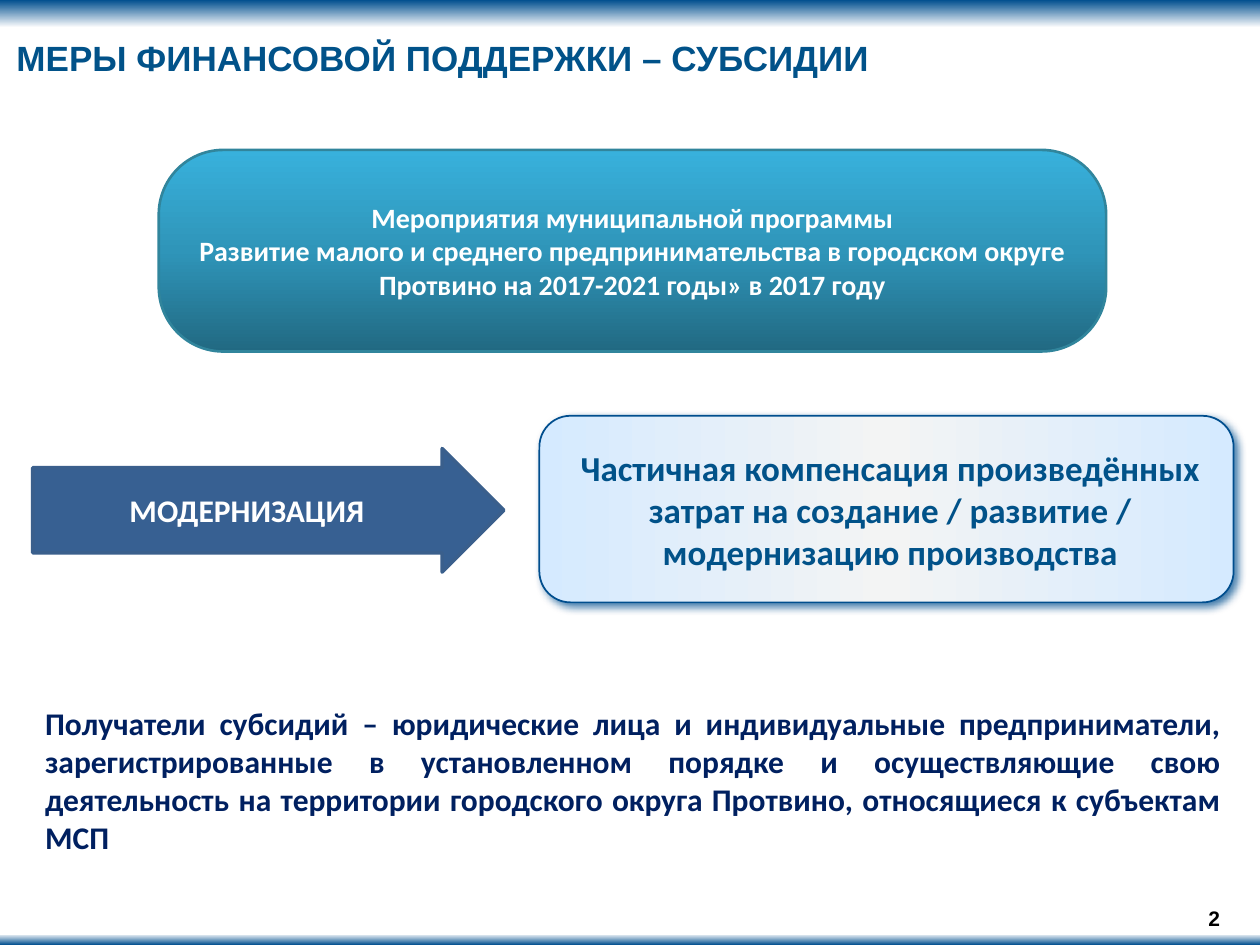
from dataclasses import dataclass
from typing import Optional

from pptx import Presentation
from pptx.dml.color import RGBColor
from pptx.enum.shapes import MSO_SHAPE
from pptx.enum.text import MSO_ANCHOR, MSO_AUTO_SIZE, PP_ALIGN
from pptx.oxml import parse_xml
from pptx.oxml.ns import nsdecls, qn
from pptx.util import Pt

COLORS = {
    "navy": "004E8E", "white": "FFFFFF", "title": "015289", "black": "000000",
    "pale": "D5EAFF", "grey": "F3F4F4", "arrow": "376092", "arrow_line": "3A5F8C",
    "deep": "216982", "teal": "2F95B9", "sky": "38B1DC", "teal_line": "31859C",
    "body": "002060",
}


@dataclass
class Box:
    """A preset shape with its place in points, its fill and its outline."""
    left: float
    top: float
    width: float
    height: float
    kind: MSO_SHAPE = MSO_SHAPE.RECTANGLE
    fill: tuple[str, ...] = ()
    angle: int = 0
    line: Optional[str] = None
    line_width: float = 1
    adjust: tuple[float, ...] = ()
    shadow: Optional[str] = None


BANDS = [
    Box(0, 533.5, 720, 6.5, fill=("navy", "white"), angle=270),
    Box(0, 0, 720, 15.8, fill=("navy", "white"), angle=90),
]
MEASURE = Box(308.2, 237.6, 396.7, 106.6, MSO_SHAPE.ROUNDED_RECTANGLE,
              ("pale", "grey", "pale"), line="navy", shadow="navy")
ARROW = Box(18.7, 256.3, 269.3, 70.6, MSO_SHAPE.RIGHT_ARROW, ("arrow",),
            line="arrow_line", line_width=2, adjust=(0.69, 0.5))
PROGRAM = Box(90.7, 85.7, 541.4, 115.2, MSO_SHAPE.ROUNDED_RECTANGLE,
              ("deep", "teal", "sky"), 270, "teal_line", 1.5, (0.32,))


def rgb(name: str) -> RGBColor:
    """Return a named colour."""
    return RGBColor.from_string(COLORS[name])


def set_gradient(sp, names: tuple[str, ...], angle: int) -> None:
    """Fill a shape with evenly spaced gradient stops."""
    stops = "".join(
        f'<a:gs pos="{i * 100000 // (len(names) - 1)}"><a:srgbClr val="{COLORS[name]}"/></a:gs>'
        for i, name in enumerate(names))
    sp.fill.gradient()
    spPr = sp._element.spPr
    spPr.replace(spPr.find(qn("a:gradFill")), parse_xml(
        f'<a:gradFill {nsdecls("a")} rotWithShape="1"><a:gsLst>{stops}</a:gsLst>'
        f'<a:lin ang="{angle * 60000}" scaled="0"/></a:gradFill>'))


def set_shadow(sp, name: str) -> None:
    """Give a shape a soft shadow towards the lower right."""
    sp._element.spPr.find(qn("a:effectLst")).append(parse_xml(
        f'<a:outerShdw {nsdecls("a")} blurRad="{Pt(5)}" dist="{Pt(3)}" dir="2700000" '
        f'algn="tl" rotWithShape="0"><a:srgbClr val="{COLORS[name]}">'
        '<a:alpha val="75000"/></a:srgbClr></a:outerShdw>'))


def add_box(s, box: Box):
    """Draw a box on the slide and return its shape."""
    sp = s.shapes.add_shape(box.kind, Pt(box.left), Pt(box.top), Pt(box.width), Pt(box.height))
    sp.shadow.inherit = False
    for i, value in enumerate(box.adjust):
        sp.adjustments[i] = value
    if len(box.fill) > 1:
        set_gradient(sp, box.fill, box.angle)
    else:
        sp.fill.solid()
        sp.fill.fore_color.rgb = rgb(box.fill[0])
    if box.line:
        sp.line.color.rgb = rgb(box.line)
        sp.line.width = Pt(box.line_width)
    else:
        sp.line.fill.background()
    if box.shadow:
        set_shadow(sp, box.shadow)
    return sp


def add_textbox(s, left: float, top: float, width: float, height: float):
    """Add a text box placed in points."""
    return s.shapes.add_textbox(Pt(left), Pt(top), Pt(width), Pt(height))


def set_text(sp, text: str, *, size: float, color: str, font: str = "Calibri",
             align: PP_ALIGN = PP_ALIGN.CENTER, anchor: MSO_ANCHOR = MSO_ANCHOR.MIDDLE,
             margin: Optional[float] = None, indent: float = 0,
             wrap: bool = True, grow: bool = False) -> None:
    """Write bold text into a shape and format it."""
    tf = sp.text_frame
    tf.text = text
    tf.word_wrap = wrap
    tf.vertical_anchor = anchor
    tf.auto_size = MSO_AUTO_SIZE.SHAPE_TO_FIT_TEXT if grow else MSO_AUTO_SIZE.NONE
    if margin is not None:
        tf.margin_left = tf.margin_top = tf.margin_right = tf.margin_bottom = Pt(margin)
    for p in tf.paragraphs:
        p.alignment = align
        if indent:
            p._p.get_or_add_pPr().set("marL", str(Pt(indent)))
        for r in p.runs:
            r.font.name = font
            r.font.size = Pt(size)
            r.font.bold = True
            r.font.color.rgb = rgb(color)


def main() -> None:
    """Build the slide and save it."""
    prs = Presentation()
    prs.slide_width, prs.slide_height = Pt(720), Pt(540)
    s = prs.slides.add_slide(prs.slide_layouts[6])
    for band in BANDS:
        add_box(s, band)
    set_text(add_textbox(s, 9.4, 20.9, 666, 24.5), "МЕРЫ ФИНАНСОВОЙ ПОДДЕРЖКИ – СУБСИДИИ",
             size=20, color="title", font="Arial", align=PP_ALIGN.LEFT,
             anchor=MSO_ANCHOR.TOP, margin=0, grow=True)
    set_text(add_textbox(s, 536.4, 514.8, 167.8, 19.4), "2",
             size=12, color="black", font="Arial", align=PP_ALIGN.RIGHT)
    set_text(add_box(s, MEASURE),
             "Частичная компенсация произведённых затрат на создание / развитие / "
             "модернизацию производства",
             size=20, color="title", margin=2.9, indent=4.3)
    set_text(add_box(s, ARROW), "МОДЕРНИЗАЦИЯ", size=18, color="white")
    set_text(add_box(s, PROGRAM),
             "Мероприятия муниципальной программы\v"
             "Развитие малого и среднего предпринимательства в городском округе\n"
             "Протвино на 2017-2021 годы» в 2017 году",
             size=16, color="white", wrap=False)
    set_text(add_textbox(s, 18.7, 398.9, 686.2, 94.3),
             "Получатели субсидий – юридические лица и индивидуальные предприниматели, "
             "зарегистрированные в установленном порядке и осуществляющие свою деятельность "
             "на территории городского округа Протвино, относящиеся к субъектам МСП",
             size=18, color="body", align=PP_ALIGN.JUSTIFY, anchor=MSO_ANCHOR.TOP, grow=True)
    prs.save("out.pptx")


if __name__ == "__main__":
    main()
